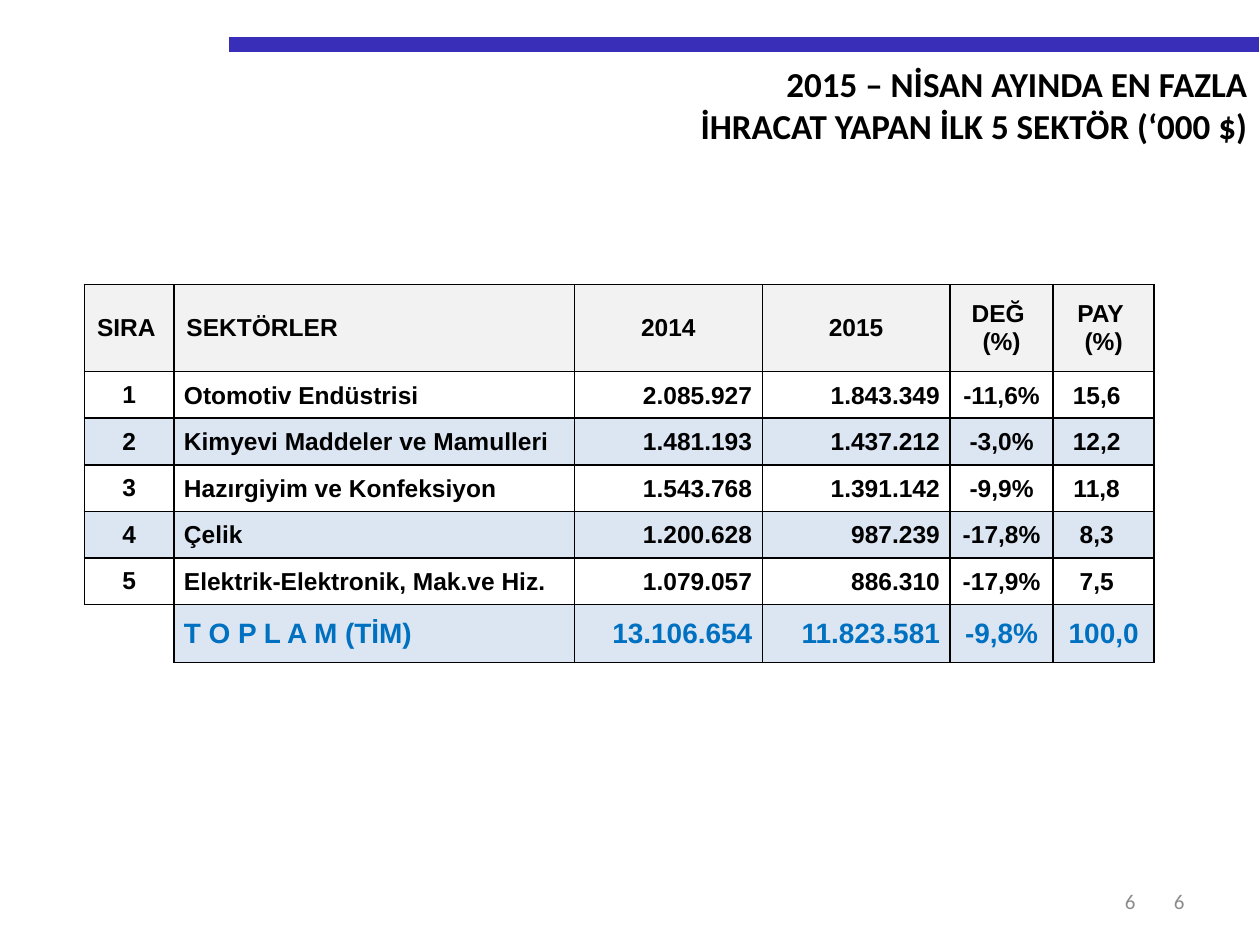
from dataclasses import dataclass

from lxml.etree import SubElement
from pptx import Presentation
from pptx.dml.color import RGBColor
from pptx.enum.shapes import MSO_CONNECTOR
from pptx.enum.text import MSO_ANCHOR, PP_ALIGN
from pptx.oxml.ns import qn
from pptx.util import Inches, Pt

LEFT, CENTER, RIGHT = PP_ALIGN.LEFT, PP_ALIGN.CENTER, PP_ALIGN.RIGHT
UNIT = Inches(0.1)  # the page is a grid of 100 columns by 75 rows
INK, GREY, BLUE, BAR = "000000", "8C8C8C", "0070C0", "382EB8"
HEADER_FILL, BAND_FILL = "F2F2F2", "DCE6F2"
SIDES = {"L": "left", "R": "right", "T": "top", "B": "bottom"}


@dataclass
class Style:
    font: str
    size: int
    color: str
    bold: bool = False


@dataclass
class Label:
    lines: list[str]
    area: tuple[float, float, float, float]  # left, top, width, height in grid units
    style: Style
    anchor: MSO_ANCHOR


@dataclass
class Column:
    width: float
    align: PP_ALIGN
    header_align: PP_ALIGN
    margins: dict[str, float]  # in grid units


TITLE = Style("Calibri", 20, INK, True)
NUMBER = Style("Calibri", 12, GREY)
BODY = Style("Arial", 14, INK, True)
TOTAL = Style("Arial", 16, BLUE, True)

LABELS = [
    Label(["6"], (71.7, 69.5, 23.3, 4), NUMBER, MSO_ANCHOR.MIDDLE),
    Label(["6"], (70.1, 69.5, 21, 4), NUMBER, MSO_ANCHOR.MIDDLE),
    Label(["2015 – NİSAN AYINDA EN FAZLA", "İHRACAT YAPAN İLK 5 SEKTÖR (‘000 $)"],
          (10.6, 4.5, 89.4, 7.7), TITLE, MSO_ANCHOR.TOP),
]

DEFAULT_MARGINS = {"left": 1, "right": 1, "top": 0.5, "bottom": 0.5}
TIGHT = {"left": 0.1, "right": 0.1, "top": 0.1, "bottom": 0}
AMOUNT = Column(14.9, RIGHT, CENTER, TIGHT | {"right": 0.8})
COLUMNS = [
    Column(7.1, CENTER, LEFT, DEFAULT_MARGINS),
    Column(31.8, LEFT, LEFT, TIGHT | {"left": 0.8}),
    AMOUNT,
    AMOUNT,
    Column(8.2, CENTER, CENTER, TIGHT),
    Column(8, CENTER, CENTER, TIGHT | {"right": 1.2}),
]
ROW_HEIGHTS = [6.9] + [3.7] * 5 + [4.6]
ROWS = [
    ["SIRA", "SEKTÖRLER", "2014", "2015", "DEĞ \n(%)", "PAY \n(%)"],
    ["1", "Otomotiv Endüstrisi", "2.085.927", "1.843.349", "-11,6%", "15,6"],
    ["2", "Kimyevi Maddeler ve Mamulleri", "1.481.193", "1.437.212", "-3,0%", "12,2"],
    ["3", "Hazırgiyim ve Konfeksiyon", "1.543.768", "1.391.142", "-9,9%", "11,8"],
    ["4", "Çelik", "1.200.628", "987.239", "-17,8%", "8,3"],
    ["5", "Elektrik-Elektronik, Mak.ve Hiz.", "1.079.057", "886.310", "-17,9%", "7,5"],
    ["", "T O P L A M (TİM)", "13.106.654", "11.823.581", "-9,8%", "100,0"],
]


def grid(units: float) -> int:
    return round(units * UNIT)


def rgb(color: str) -> RGBColor:
    return RGBColor.from_string(color)


def write(frame, lines: list[str], style: Style, align: PP_ALIGN) -> None:
    values = {"name": style.font, "size": Pt(style.size), "bold": style.bold}
    for index, line in enumerate(lines):
        para = frame.paragraphs[0] if index == 0 else frame.add_paragraph()
        para.alignment = align
        span = para.add_run()
        span.text = line
        for name, value in values.items():
            setattr(span.font, name, value)
        span.font.color.rgb = rgb(style.color)


def draw_label(page, label: Label) -> None:
    box = page.shapes.add_textbox(*map(grid, label.area))
    box.text_frame.word_wrap = True
    box.text_frame.vertical_anchor = label.anchor
    write(box.text_frame, label.lines, label.style, RIGHT)


def draw_bar(page) -> None:
    bar = page.shapes.add_connector(
        MSO_CONNECTOR.STRAIGHT, grid(18.2), grid(3.5), grid(99.9), grid(3.5))
    bar.line.color.rgb = rgb(BAR)
    bar.line.width = Pt(8.5)
    SubElement(bar.element.spPr, qn("a:effectLst"))


def set_borders(cell, visible: str) -> None:
    properties = cell._tc.get_or_add_tcPr()
    for side in SIDES:
        line = SubElement(properties, qn(f"a:ln{side}"), w=str(Pt(1)))
        if side in visible:
            fill = SubElement(line, qn("a:solidFill"))
            SubElement(fill, qn("a:srgbClr"), val=INK)
        else:
            SubElement(line, qn("a:noFill"))


def draw_cell(cell, text: str, column: Column, row: int, last_row: int) -> None:
    header, total = row == 0, row == last_row
    set_borders(cell, "LRTB" if text else "RT")
    if header:
        cell.fill.solid()
        cell.fill.fore_color.rgb = rgb(HEADER_FILL)
    elif text and row % 2 == 0:
        cell.fill.solid()
        cell.fill.fore_color.rgb = rgb(BAND_FILL)
    else:
        cell.fill.background()
    margins = DEFAULT_MARGINS if header else column.margins
    if total and column is COLUMNS[-1]:
        margins = TIGHT
    for side in SIDES.values():
        setattr(cell, f"margin_{side}", grid(margins[side]))
    cell.vertical_anchor = MSO_ANCHOR.MIDDLE
    if text:
        write(cell.text_frame, text.split("\n"), TOTAL if total else BODY,
              column.header_align if header else column.align)


def draw_table(page) -> None:
    width = sum(column.width for column in COLUMNS)
    table = page.shapes.add_table(len(ROWS), len(COLUMNS), grid(6.7), grid(22.6),
                                  grid(width), grid(sum(ROW_HEIGHTS))).table
    for name, value in {"first_row": False, "horz_banding": False}.items():
        setattr(table, name, value)
    for index, column in enumerate(COLUMNS):
        table.columns[index].width = grid(column.width)
    for row, (height, texts) in enumerate(zip(ROW_HEIGHTS, ROWS)):
        table.rows[row].height = grid(height)
        for index, (text, column) in enumerate(zip(texts, COLUMNS)):
            draw_cell(table.cell(row, index), text, column, row, len(ROWS) - 1)


def main() -> None:
    deck = Presentation()
    deck.slide_width, deck.slide_height = grid(100), grid(75)
    page = deck.slides.add_slide(deck.slide_layouts[6])
    # Bar above the title
    draw_bar(page)
    # Title and page numbers
    for label in LABELS:
        draw_label(page, label)
    # Export figures by sector
    draw_table(page)
    deck.save("out.pptx")


if __name__ == "__main__":
    main()
